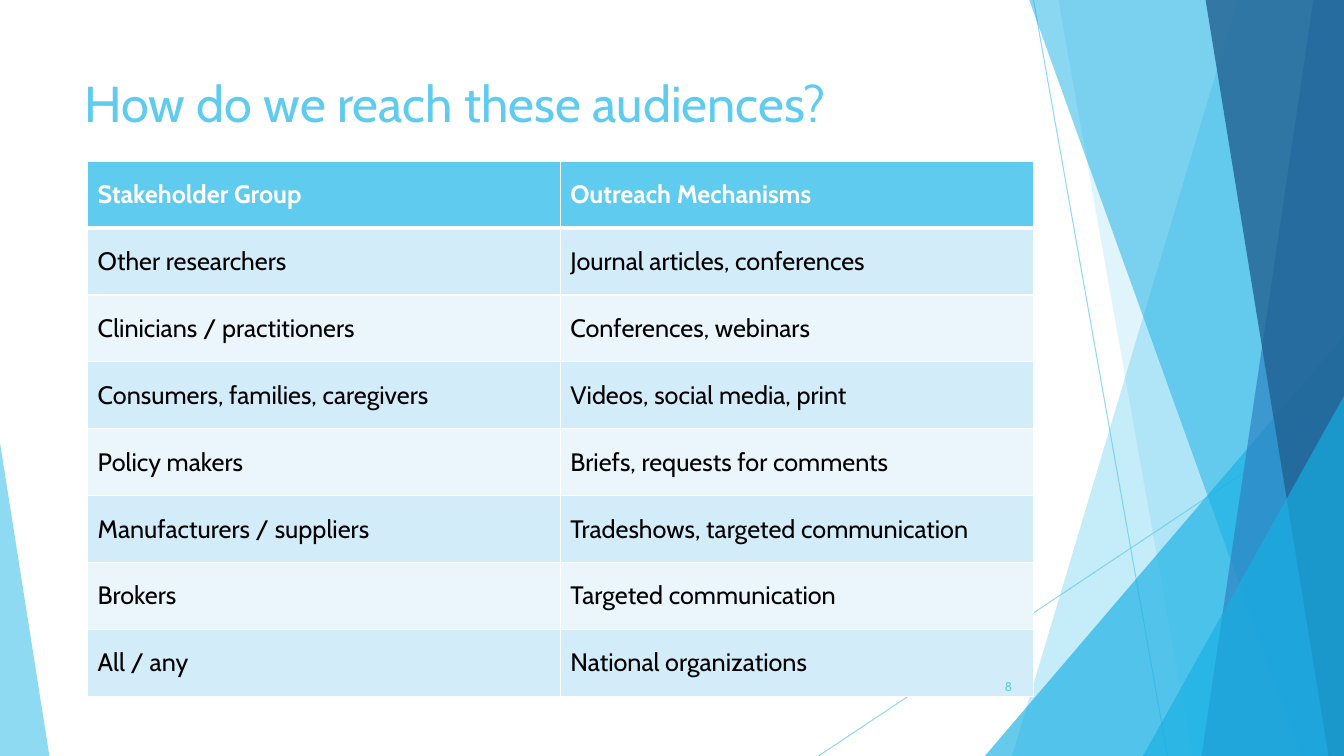
from dataclasses import dataclass

from lxml import etree
from pptx import Presentation
from pptx import util as u
from pptx.dml.color import RGBColor
from pptx.enum import shapes, text
from pptx.oxml.ns import qn


@dataclass(frozen=True)
class Theme:
    font: str = "Cabin"
    sky: str = "5FCBEF"
    cyan: str = "17B0E4"
    blue: str = "2E83C3"
    navy: str = "226292"
    white: str = "FFFFFF"
    black: str = "000000"
    row_fills: tuple = ("D2ECF9", "EAF6FC")
    title_size: int = 36
    table_size: int = 18
    number_size: int = 9
    line_width: float = 0.75
    border: int = 1
    header_border: int = 3


class SlideBuilder:
    def __init__(self, deck, theme):
        self.deck = deck
        self.theme = theme
        self.slide = deck.slides.add_slide(deck.slide_layouts[5])

    def x(self, percent):
        return round(self.deck.slide_width * percent / 100)

    def y(self, percent):
        return round(self.deck.slide_height * percent / 100)

    def box(self, left, top, width, height):
        return self.x(left), self.y(top), self.x(width), self.y(height)

    def fade(self, element, opacity):
        for color in element.iter(qn("a:srgbClr")):
            etree.SubElement(color, qn("a:alpha"), val=str(opacity * 1000))

    def paint(self, shape, color, opacity):
        shape.shadow.inherit = False
        shape.line.fill.background()
        shape.fill.solid()
        shape.fill.fore_color.rgb = RGBColor.from_string(color)
        self.fade(shape.element, opacity)

    def set_text(self, frame, wording, size, color, bold=False, align=text.PP_ALIGN.LEFT):
        frame.text = wording
        paragraph = frame.paragraphs[0]
        paragraph.alignment = align
        font = paragraph.font
        font.name, font.size, font.bold = self.theme.font, u.Pt(size), bold
        font.color.rgb = RGBColor.from_string(color)

    def ray(self, start, end):
        ray = self.slide.shapes.add_connector(
            shapes.MSO_CONNECTOR.STRAIGHT,
            self.x(start[0]), self.y(start[1]), self.x(end[0]), self.y(end[1]))
        ray.line.width = u.Pt(self.theme.line_width)
        ray.line.color.rgb = RGBColor.from_string(self.theme.sky)
        self.fade(ray.element, 70)
        etree.SubElement(ray.element.spPr, qn("a:effectLst"))

    def band(self, top_x, bottom_x, color, opacity):
        outline = self.slide.shapes.build_freeform(self.x(top_x), 0)
        corners = [(100, 0), (100, 100), (bottom_x, 100)]
        outline.add_line_segments([(self.x(x), self.y(y)) for x, y in corners])
        self.paint(outline.convert_to_shape(), color, opacity)

    def wedge(self, area, apex, color, opacity):
        wedge = self.slide.shapes.add_shape(
            shapes.MSO_SHAPE.ISOSCELES_TRIANGLE, *self.box(*area))
        wedge.adjustments[0] = apex
        self.paint(wedge, color, opacity)

    def title(self, wording, area):
        title = self.slide.shapes.title
        title.left, title.top, title.width, title.height = self.box(*area)
        frame = title.text_frame
        frame.vertical_anchor = text.MSO_ANCHOR.TOP
        frame.auto_size = text.MSO_AUTO_SIZE.NONE
        self.set_text(frame, wording, self.theme.title_size, self.theme.sky)
        title.element.getparent().append(title.element)

    def borders(self, cell, top, bottom):
        thin = self.theme.border
        widths = {"L": thin, "R": thin, "T": top, "B": bottom}
        properties = cell._tc.get_or_add_tcPr()
        for side, width in widths.items():
            edge = etree.SubElement(properties, qn(f"a:ln{side}"), w=str(u.Pt(width)))
            fill = etree.SubElement(edge, qn("a:solidFill"))
            etree.SubElement(fill, qn("a:srgbClr"), val=self.theme.white)

    def table(self, rows, area):
        theme = self.theme
        table = self.slide.shapes.add_table(
            len(rows), len(rows[0]), *self.box(*area)).table
        for r, row in enumerate(rows):
            header = r == 0
            top = theme.header_border if r == 1 else theme.border
            bottom = theme.header_border if header else theme.border
            background = theme.sky if header else theme.row_fills[(r - 1) % 2]
            for c, wording in enumerate(row):
                cell = table.cell(r, c)
                cell.vertical_anchor = text.MSO_ANCHOR.MIDDLE
                self.borders(cell, top, bottom)
                cell.fill.solid()
                cell.fill.fore_color.rgb = RGBColor.from_string(background)
                self.set_text(cell.text_frame, wording, theme.table_size,
                              theme.white if header else theme.black, header)

    def page_number(self, number, area):
        frame = self.slide.shapes.add_textbox(*self.box(*area)).text_frame
        frame.word_wrap = True
        frame.vertical_anchor = text.MSO_ANCHOR.MIDDLE
        self.set_text(frame, number, self.theme.number_size, self.theme.sky,
                      align=text.PP_ALIGN.RIGHT)


OUTREACH = [
    ("Stakeholder Group", "Outreach Mechanisms"),
    ("Other researchers", "Journal articles, conferences"),
    ("Clinicians / practitioners", "Conferences, webinars"),
    ("Consumers, families, caregivers", "Videos, social media, print"),
    ("Policy makers", "Briefs, requests for comments"),
    ("Manufacturers / suppliers", "Tradeshows, targeted communication"),
    ("Brokers", "Targeted communication"),
    ("All / any", "National organizations"),
]


def main():
    deck = Presentation()
    deck.slide_width, deck.slide_height = u.Inches(13.33), u.Inches(7.5)
    theme = Theme()
    page = SlideBuilder(deck, theme)

    page.ray((76.9, 0), (86.87, 100))
    page.ray((100, 53.73), (60.9, 100))
    page.band(92.1, 75.3, theme.sky, 36)
    page.band(78.75, 88.72, theme.sky, 20)
    page.wedge((73.28, 44.4, 26.72, 55.6), 1, theme.cyan, 66)
    page.band(76.58, 96.82, theme.cyan, 50)
    page.band(97.72, 89.4, theme.blue, 70)
    page.band(89.7, 98.85, theme.navy, 80)
    page.wedge((85.05, 52.4, 14.95, 47.6), 1, theme.cyan, 66)
    page.wedge((0, 58.53, 3.68, 41.47), 0, theme.sky, 70)

    page.title("How do we reach these audiences?", (5.55, 8.93, 70.5, 10.8))
    page.table(OUTREACH, (6.52, 21.33, 70.35, 70.8))
    page.page_number("8", (70.43, 88.13, 5.63, 5.33))
    deck.save("out.pptx")


if __name__ == "__main__":
    main()
